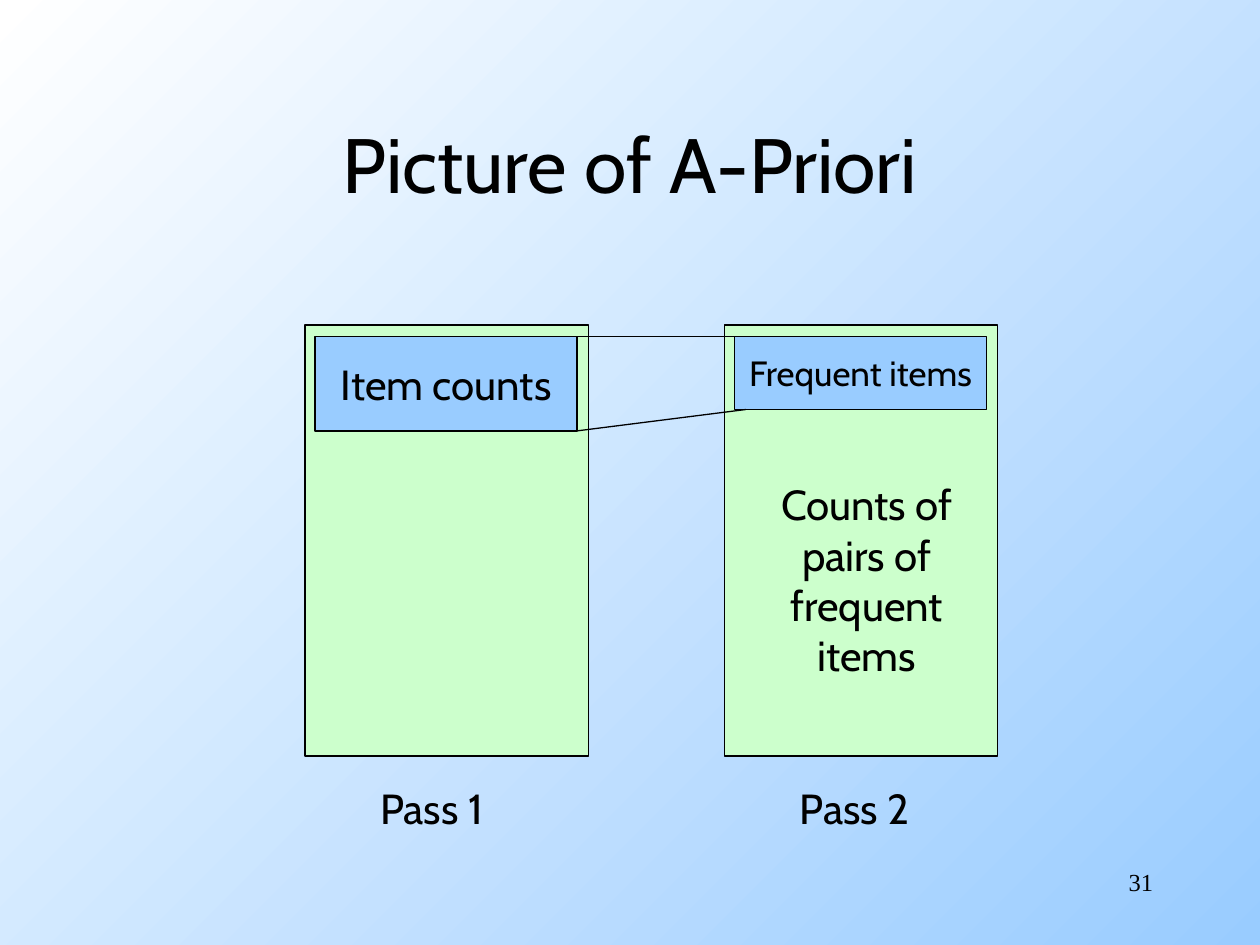
from dataclasses import dataclass

from lxml import etree
from pptx import Presentation
from pptx import util as u
from pptx.dml.color import RGBColor
from pptx.enum import shapes, text
from pptx.oxml.ns import qn


@dataclass(frozen=True)
class Theme:
    """Colours, fonts and type sizes of the slide."""
    ink: RGBColor = RGBColor(0, 0, 0)
    paper: RGBColor = RGBColor(0xFF, 0xFF, 0xFF)
    sky: RGBColor = RGBColor(0x99, 0xCC, 0xFF)
    mint: RGBColor = RGBColor(0xCC, 0xFF, 0xCC)
    face: str = "Cabin"
    number_face: str = "Times New Roman"
    title: int = 44
    label: int = 24
    small: int = 20
    number: int = 14
    rule: float = 0.75


class Board:
    """Holds the theme and the current slide, and draws each kind of element."""

    def __init__(self, deck, theme):
        """Add a slide with a diagonal gradient background."""
        self.theme = theme
        self.slide = deck.slides.add_slide(deck.slide_layouts[5])
        fill = self.slide.background.fill
        fill.gradient()
        fill.gradient_angle = 315
        for stop, color in zip(fill.gradient_stops, (theme.paper, theme.sky)):
            stop.color.rgb = color

    def set_words(self, shape, lines, size, face=None, align=text.PP_ALIGN.LEFT, **frame_format):
        """Fill a shape with one paragraph per line."""
        frame = shape.text_frame
        frame.text = "\n".join(lines)
        for name, value in frame_format.items():
            setattr(frame, name, value)
        font_format = {"name": face or self.theme.face, "size": u.Pt(size)}
        for paragraph in frame.paragraphs:
            paragraph.alignment = align
            for run in paragraph.runs:
                run.font.color.rgb = self.theme.ink
                for name, value in font_format.items():
                    setattr(run.font, name, value)

    def title(self, words, *box):
        """Place and fill the title placeholder."""
        heading = self.slide.shapes.title
        places = zip(("left", "top", "width", "height"), box)
        for name, value in places:
            setattr(heading, name, u.Inches(value))
        self.set_words(heading, [words], self.theme.title, align=text.PP_ALIGN.CENTER,
                       vertical_anchor=text.MSO_ANCHOR.MIDDLE,
                       auto_size=text.MSO_AUTO_SIZE.NONE)

    def label(self, lines, *box, size=None, **style):
        """Add a text box."""
        caption = self.slide.shapes.add_textbox(*map(u.Inches, box))
        frame_format = {"word_wrap": False, **style}
        self.set_words(caption, lines, size or self.theme.label, **frame_format)

    def block(self, color, *box, words=None, size=None):
        """Add an outlined rectangle, with centred words if given."""
        area = self.slide.shapes.add_shape(
            shapes.MSO_SHAPE.RECTANGLE, *map(u.Inches, box))
        area.shadow.inherit = False
        area.fill.solid()
        area.fill.fore_color.rgb = color
        area.line.color.rgb = self.theme.ink
        area.line.width = u.Pt(self.theme.rule)
        if words:
            self.set_words(area, [words], size, align=text.PP_ALIGN.CENTER,
                           vertical_anchor=text.MSO_ANCHOR.MIDDLE, word_wrap=False)

    def line(self, *ends):
        """Add a plain straight line."""
        link = self.slide.shapes.add_connector(
            shapes.MSO_CONNECTOR.STRAIGHT, *map(u.Inches, ends))
        link.line.color.rgb = self.theme.ink
        link.line.width = u.Pt(self.theme.rule)
        etree.SubElement(link._element.spPr, qn("a:effectLst"))


def main():
    """Build the two-pass memory diagram."""
    deck = Presentation()
    deck.slide_width, deck.slide_height = u.Inches(10), u.Inches(7.5)
    theme = Theme()
    board = Board(deck, theme)
    board.title("Picture of A-Priori", 0.75, 0.67, 8.5, 1.25)

    memory_top, memory_height, inner_top = 2.58, 3.42, 2.67
    passes = [
        ("Pass 1", 2.42, 2.25, 2.92, "Item counts", 2.5, 2.08, 0.75, theme.label),
        ("Pass 2", 5.75, 2.17, 6.25, "Frequent items", 5.83, 2, 0.58, theme.small),
    ]
    for name, left, width, name_left, items, inner_left, inner_width, height, size in passes:
        board.block(theme.mint, left, memory_top, width, memory_height)
        board.block(theme.sky, inner_left, inner_top, inner_width, height,
                    words=items, size=size)
        board.label([name], name_left, 6.16, 1.15, 0.5)

    board.label(["Counts of", "pairs of", "frequent", "items"], 6.08, 3.75, 1.6, 1.7,
                align=text.PP_ALIGN.CENTER)
    board.line(4.58, inner_top, 5.83, inner_top)
    board.line(4.58, 3.42, 5.92, 3.25)
    board.label(["31"], 7.17, 6.83, 2.08, 0.5, size=theme.number,
                face=theme.number_face, align=text.PP_ALIGN.RIGHT, word_wrap=True)
    deck.save("out.pptx")


if __name__ == "__main__":
    main()
